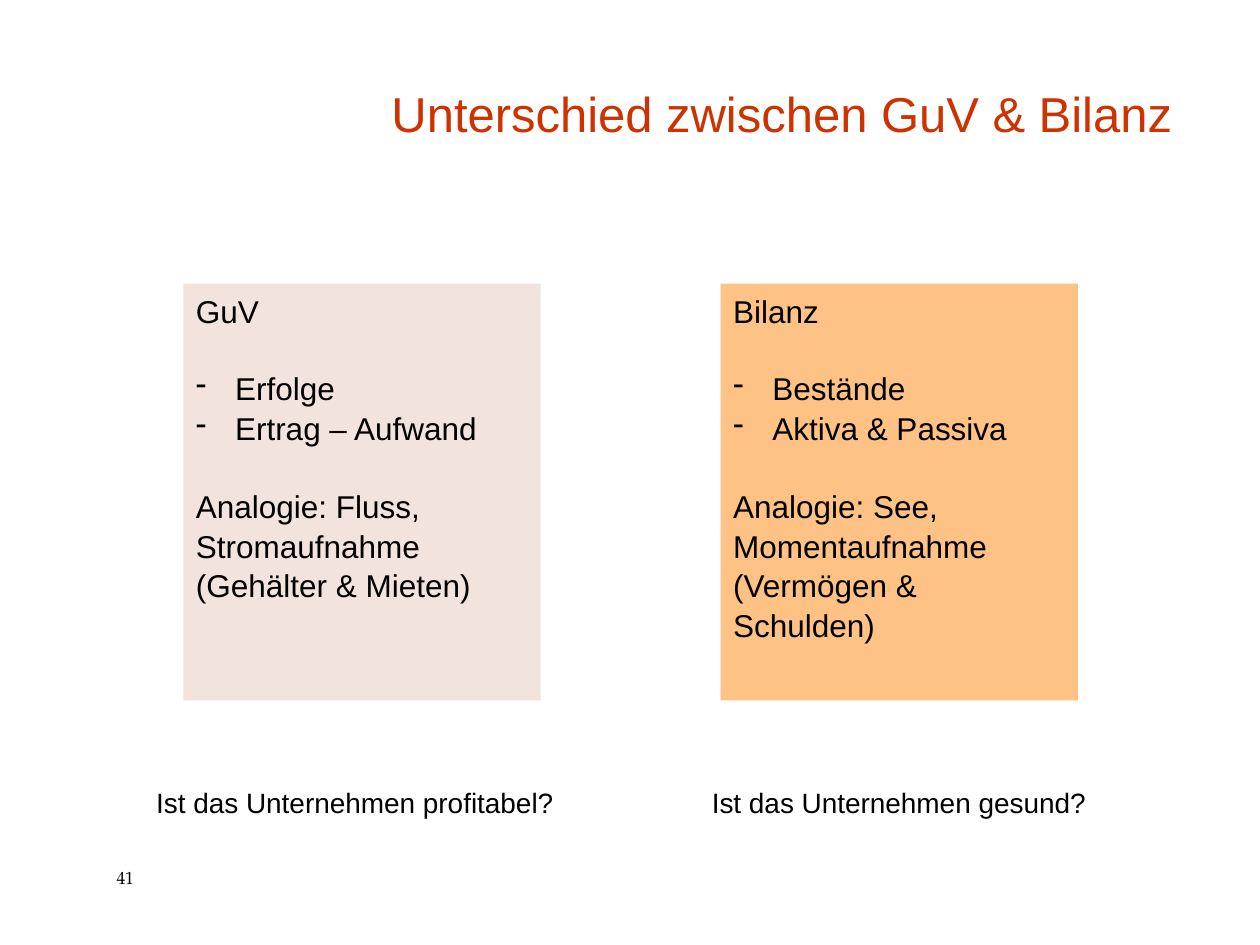
from dataclasses import dataclass

from lxml import etree
from pptx import Presentation
from pptx.dml.color import RGBColor
from pptx.enum import shapes, text
from pptx.oxml.ns import qn
from pptx.util import Cm, Length, Pt

BODY_FONT = "Arial"
LINE_SPACING = 1.05
SECTION_GAP = Pt(21.7)
BULLET_INDENT = Cm(0.79)


@dataclass
class Statement:
    """One of the two compared financial statements."""
    heading: str
    contents: list[str]
    analogy: str
    question: str
    fill: str
    panel_left: Length
    question_left: Length


STATEMENTS = [
    Statement("GuV", ["Erfolge", "Ertrag – Aufwand"],
              "Analogie: Fluss, Stromaufnahme (Gehälter & Mieten)",
              "Ist das Unternehmen profitabel?",
              "F3E3DD", Cm(3.7), Cm(2.9)),
    Statement("Bilanz", ["Bestände", "Aktiva & Passiva"],
              "Analogie: See, Momentaufnahme (Vermögen & Schulden)",
              "Ist das Unternehmen gesund?",
              "FFC285", Cm(14.53), Cm(14.1)),
]


def color(hex_code: str) -> RGBColor:
    return RGBColor.from_string(hex_code)


def style(paragraph, size: float, hex_code: str = "000000",
          font_name: str = BODY_FONT, bold: bool = False) -> None:
    for run in paragraph.runs:
        run.font.name = font_name
        run.font.size = Pt(size)
        run.font.bold = bold
        run.font.color.rgb = color(hex_code)


def add_dash(paragraph) -> None:
    """Give the paragraph a hanging dash as its bullet."""
    properties = paragraph._p.get_or_add_pPr()
    properties.set("marL", str(BULLET_INDENT))
    properties.set("indent", str(-BULLET_INDENT))
    etree.SubElement(properties, qn("a:buChar")).set("char", "-")


def add_label(slide, wording: str, left: Length, top: Length, width: Length,
              height: Length):
    frame = slide.shapes.add_textbox(left, top, width, height).text_frame
    frame.word_wrap = True
    frame.text = wording
    return frame


def add_panel(slide, statement: Statement) -> None:
    panel = slide.shapes.add_shape(shapes.MSO_SHAPE.RECTANGLE,
                                   statement.panel_left, Cm(5.72),
                                   Cm(7.2), Cm(8.4))
    panel.shadow.inherit = False
    panel.fill.solid()
    panel.fill.fore_color.rgb = color(statement.fill)
    panel.line.fill.background()

    frame = panel.text_frame
    frame.word_wrap = True
    frame.vertical_anchor = text.MSO_ANCHOR.TOP
    frame.text = "\n".join([statement.heading, *statement.contents,
                            statement.analogy])
    heading, *contents, analogy = frame.paragraphs
    for item in contents:
        add_dash(item)
    for section_start in (contents[0], analogy):
        section_start.space_before = SECTION_GAP
    for paragraph in frame.paragraphs:
        paragraph.alignment = text.PP_ALIGN.LEFT
        paragraph.line_spacing = LINE_SPACING
        style(paragraph, 18, bold=paragraph is heading)


def main() -> None:
    presentation = Presentation()
    presentation.slide_width, presentation.slide_height = Cm(25.4), Cm(19.05)
    slide = presentation.slides.add_slide(presentation.slide_layouts[6])

    page_number = add_label(slide, "41", Cm(2.1), Cm(17.35), Cm(1.7), Cm(0.69))
    style(page_number.paragraphs[0], 10, font_name="TeX Gyre Pagella")

    title = add_label(slide, "Unterschied zwischen GuV & Bilanz ",
                      Cm(5.1), Cm(-0.28), Cm(19.05), Cm(3.28))
    title.vertical_anchor = text.MSO_ANCHOR.BOTTOM
    title.paragraphs[0].alignment = text.PP_ALIGN.RIGHT
    style(title.paragraphs[0], 28, "CC3300")

    for statement in STATEMENTS:
        add_panel(slide, statement)
        question = add_label(slide, statement.question,
                             statement.question_left, Cm(15.72),
                             Cm(9), Cm(0.94))
        style(question.paragraphs[0], 16)

    presentation.save("out.pptx")


if __name__ == "__main__":
    main()
